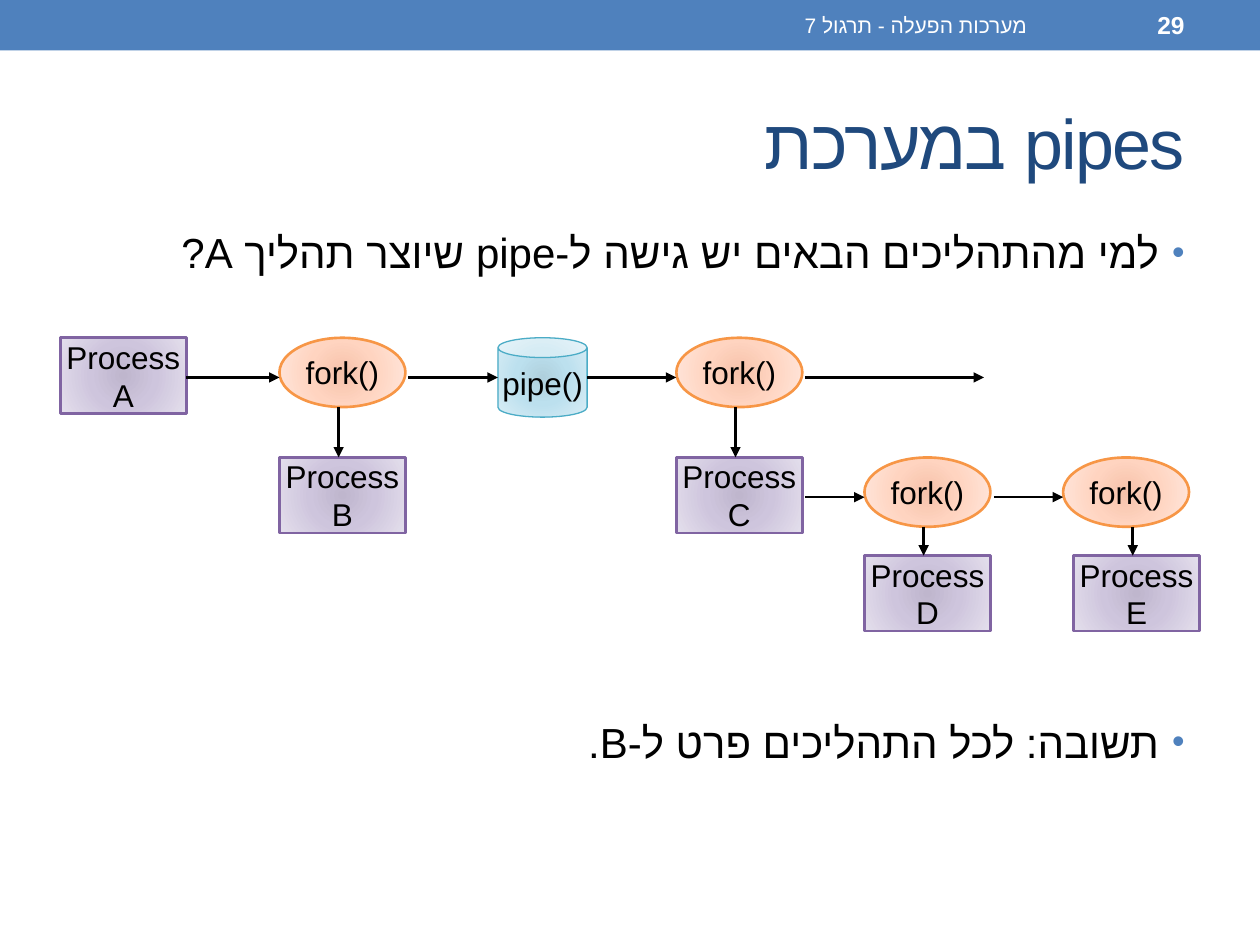
import pptx
import pptx.util
import pptx.dml.color
import pptx.enum.shapes
import pptx.enum.text
import pptx.oxml
import pptx.oxml.ns
from lxml import etree

Pt = pptx.util.Pt
SHAPE = pptx.enum.shapes.MSO_SHAPE
ALIGN = pptx.enum.text.PP_ALIGN
MIDDLE = pptx.enum.text.MSO_ANCHOR.MIDDLE
TOP = pptx.enum.text.MSO_ANCHOR.TOP
qn = pptx.oxml.ns.qn

COLORS = {"bar": "4F81BD", "title": "1F497D", "text": "000000", "light": "FFFFFF"}
TITLE = "pipes במערכת"
BULLETS = [
    ("למי מהתהליכים הבאים יש גישה ל-pipe שיוצר תהליך A?", 0),
    ("תשובה: לכל התהליכים פרט ל-B.", 251),
]
HEADER = [
    ("מערכות הפעלה - תרגול 7", 270, 324, {"size": Pt(12)}),
    ("29", 600, 84, {"size": Pt(14), "bold": True}),
]
KINDS = {
    "process": (SHAPE.RECTANGLE, 72, 43.2, "8064A2", 1.5, ("BFB6CD", "CEC5DD", "E4DFEC")),
    "fork": (SHAPE.OVAL, 72, 39.6, "F79646", 1.5, ("F6C2AA", "FFD4C0", "FFE7DD")),
    "pipe": (SHAPE.CAN, 51, 45.4, "4BACC6", 0.75, ("AFD0DD", "BCE0EE", "DAEEF6")),
}
STOPS = (0, 45000, 100000)
ROWS = (193, 261.4, 317.5)
NODES = [
    ("process", ["Process", "A"], 34.5, 0),
    ("fork", ["fork()"], 159.7, 0),
    ("pipe", ["pipe()"], 284.5, 0),
    ("fork", ["fork()"], 386.5, 0),
    ("process", ["Process", "B"], 159.7, 1),
    ("process", ["Process", "C"], 386.5, 1),
    ("fork", ["fork()"], 494, 1),
    ("fork", ["fork()"], 607.5, 1),
    ("process", ["Process", "D"], 494, 2),
    ("process", ["Process", "E"], 613.5, 2),
]
FLOWS = [
    (0, 106.5, 159.7), (0, 233.3, 284.5), (0, 335.5, 386.5),
    (0, 460, 562.3), (1, 460, 494), (1, 568, 607.5),
]
FLOW_DROP = 22.7
CHILD_DROP = 33.8


def rgb(value):
    return pptx.dml.color.RGBColor.from_string(value)


def write(tf, lines, color, align, font, anchor=MIDDLE, wrap=True):
    tf.word_wrap = wrap
    tf.vertical_anchor = anchor
    for i, line in enumerate(lines):
        p = tf.paragraphs[0] if i == 0 else tf.add_paragraph()
        p.alignment = align
        if align == ALIGN.RIGHT:
            p._p.get_or_add_pPr().set("rtl", "1")
        r = p.add_run()
        r.text = line
        for key, value in {"name": "Arial", **font}.items():
            setattr(r.font, key, value)
        r.font.color.rgb = rgb(color)
        etree.SubElement(r._r.get_or_add_rPr(), qn("a:cs")).set("typeface", "Arial")


def add_bullet(p):
    pPr = p._p.get_or_add_pPr()
    pPr.set("marL", str(Pt(14.4)))
    pPr.set("indent", str(-Pt(14.4)))
    color = etree.SubElement(pPr, qn("a:buClr"))
    etree.SubElement(color, qn("a:srgbClr")).set("val", COLORS["bar"])
    for tag, key, value in (("buSzPct", "val", "85000"), ("buFont", "typeface", "Arial"),
                            ("buChar", "char", "•")):
        etree.SubElement(pPr, qn("a:" + tag)).set(key, value)


def radial_fill(sp, colors):
    stops = "".join(f'<a:gs pos="{pos}"><a:srgbClr val="{c}"/></a:gs>'
                    for pos, c in zip(STOPS, colors))
    grad = pptx.oxml.parse_xml(
        f'<a:gradFill {pptx.oxml.ns.nsdecls("a")} rotWithShape="1"><a:gsLst>{stops}</a:gsLst>'
        '<a:path path="circle"><a:fillToRect l="100000" t="100000" r="100000" b="100000"/>'
        '</a:path></a:gradFill>')
    sp.fill.background()
    spPr = sp._element.spPr
    spPr.replace(spPr.find(qn("a:noFill")), grad)


def add_node(shapes, kind, lines, x, row):
    preset, w, h, line, weight, colors = KINDS[kind]
    sp = shapes.add_shape(preset, Pt(x), Pt(ROWS[row]), Pt(w), Pt(h))
    sp.shadow.inherit = False
    radial_fill(sp, colors)
    sp.line.color.rgb = rgb(line)
    sp.line.width = Pt(weight)
    write(sp.text_frame, lines, COLORS["text"], ALIGN.CENTER, {"size": Pt(18)}, wrap=False)


def add_arrow(shapes, x1, y1, x2, y2):
    line = shapes.add_connector(pptx.enum.shapes.MSO_CONNECTOR.STRAIGHT,
                                Pt(x1), Pt(y1), Pt(x2), Pt(y2))
    line.line.color.rgb = rgb(COLORS["text"])
    line.line.width = Pt(1.5)
    etree.SubElement(line.line._get_or_add_ln(), qn("a:tailEnd")).set("type", "triangle")
    etree.SubElement(line._element.spPr, qn("a:effectLst"))


def main():
    prs = pptx.Presentation()
    prs.slide_width, prs.slide_height = Pt(720), Pt(540)
    s = prs.slides.add_slide(prs.slide_layouts[5])

    bar = s.shapes.add_shape(SHAPE.RECTANGLE, 0, 0, Pt(720), Pt(28.8))
    bar.shadow.inherit = False
    bar.fill.solid()
    bar.fill.fore_color.rgb = rgb(COLORS["bar"])
    bar.line.fill.background()

    title = s.shapes.title
    title.left, title.top, title.width, title.height = Pt(36), Pt(41.8), Pt(648), Pt(77.8)
    write(title.text_frame, [TITLE], COLORS["title"], ALIGN.RIGHT, {"size": Pt(40)})
    title.text_frame.paragraphs[0].runs[0]._r.get_or_add_rPr().set("spc", "-100")

    body = s.shapes.add_textbox(Pt(36), Pt(126), Pt(648), Pt(384))
    write(body.text_frame, [text for text, gap in BULLETS], COLORS["text"], ALIGN.RIGHT,
          {"size": Pt(24)}, anchor=TOP)
    for p, (text, gap) in zip(body.text_frame.paragraphs, BULLETS):
        p.space_before = Pt(gap)
        add_bullet(p)

    for text, x, w, font in HEADER:
        box = s.shapes.add_textbox(Pt(x), Pt(1.4), Pt(w), Pt(26))
        write(box.text_frame, [text], COLORS["light"], ALIGN.RIGHT, font)

    diagram = s.shapes.add_group_shape().shapes
    for node in NODES:
        add_node(diagram, *node)
    for row, x1, x2 in FLOWS:
        y = ROWS[row] + FLOW_DROP
        add_arrow(diagram, x1, y, x2, y)
    for kind, lines, x, row in NODES:
        if kind == "process" and row > 0:
            x += CHILD_DROP
            add_arrow(diagram, x, ROWS[row - 1] + KINDS["fork"][2], x, ROWS[row])

    prs.save("out.pptx")


if __name__ == "__main__":
    main()
